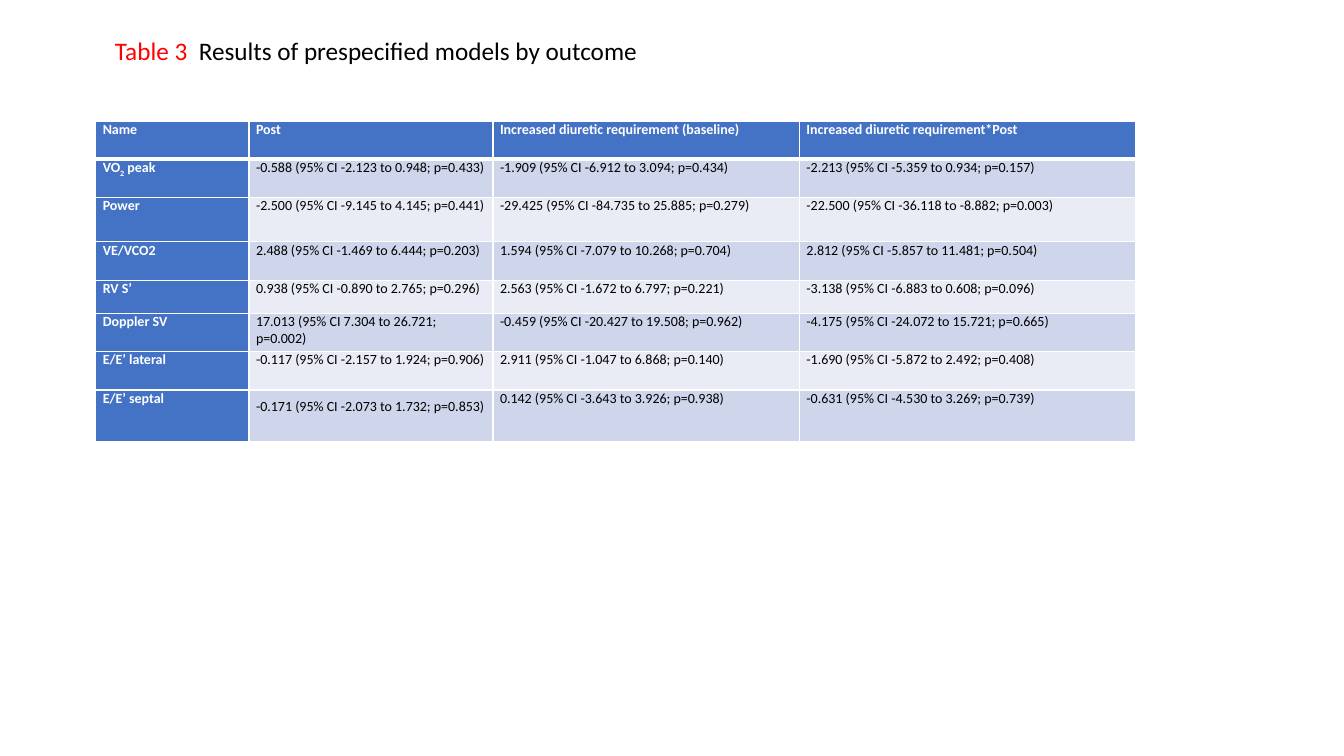
import pptx
import pptx.dml.color
import pptx.enum.text
import pptx.oxml
import pptx.oxml.ns
import pptx.util
from pptx.util import Inches

COLUMN_WIDTHS = [1.52, 2.42, 3.04, 3.33]
ROW_HEIGHTS = [0.38, 0.38, 0.44, 0.38, 0.33, 0.38, 0.38, 0.51]
HEADINGS = ["Name", "Post", "Increased diuretic requirement (baseline)",
            "Increased diuretic requirement*Post"]
OUTCOMES = [
    ("VO2 peak", "-0.588 -2.123 0.948 0.433", "-1.909 -6.912 3.094 0.434", "-2.213 -5.359 0.934 0.157"),
    ("Power", "-2.500 -9.145 4.145 0.441", "-29.425 -84.735 25.885 0.279", "-22.500 -36.118 -8.882 0.003"),
    ("VE/VCO2", "2.488 -1.469 6.444 0.203", "1.594 -7.079 10.268 0.704", "2.812 -5.857 11.481 0.504"),
    ("RV S’", "0.938 -0.890 2.765 0.296", "2.563 -1.672 6.797 0.221", "-3.138 -6.883 0.608 0.096"),
    ("Doppler SV", "17.013 7.304 26.721 0.002", "-0.459 -20.427 19.508 0.962", "-4.175 -24.072 15.721 0.665"),
    ("E/E’ lateral", "-0.117 -2.157 1.924 0.906", "2.911 -1.047 6.868 0.140", "-1.690 -5.872 2.492 0.408"),
    ("E/E’ septal", "-0.171 -2.073 1.732 0.853", "0.142 -3.643 3.926 0.938", "-0.631 -4.530 3.269 0.739"),
]


def color(value):
    return pptx.dml.color.RGBColor.from_string(value)


def describe(numbers):
    estimate, low, high, probability = numbers.split()
    return f"{estimate} (95% CI {low} to {high}; p={probability})"


class ResultsSlide:
    """Hold the style and the slide, and add each kind of element."""

    font_name = "Calibri"
    accent = "4472C4"
    bands = ["CFD5EA", "E9EBF5"]
    white = "FFFFFF"
    black = "000000"
    red = "FF0000"

    def __init__(self, presentation):
        self.slide = presentation.slides.add_slide(presentation.slide_layouts[5])

    def format_paragraph(self, paragraph, size, bold=False):
        paragraph.font.name = self.font_name
        paragraph.font.size = pptx.util.Pt(size)
        paragraph.font.bold = bold

    def add_title(self, label, text):
        title = self.slide.shapes.title
        title.left, title.top = Inches(1.04), Inches(0.3)
        title.width, title.height = Inches(7.8), Inches(0.71)
        frame = title.text_frame
        frame.auto_size = pptx.enum.text.MSO_AUTO_SIZE.NONE
        frame.vertical_anchor = pptx.enum.text.MSO_ANCHOR.TOP
        paragraph = frame.paragraphs[0]
        paragraph.alignment = pptx.enum.text.PP_ALIGN.LEFT
        self.format_paragraph(paragraph, 18)
        for words, shade in [(label, self.red), (text, self.black)]:
            run = paragraph.add_run()
            run.text = words
            run.font.color.rgb = color(shade)

    def add_borders(self, cell, top, bottom):
        properties = cell._tc.get_or_add_tcPr()
        widths = {"lnL": 1, "lnR": 1, "lnT": top, "lnB": bottom}
        for index, (side, width) in enumerate(widths.items()):
            properties.insert(index, pptx.oxml.parse_xml(
                f'<a:{side} {pptx.oxml.ns.nsdecls("a")} w="{pptx.util.Pt(width)}">'
                f'<a:solidFill><a:srgbClr val="{self.white}"/></a:solidFill></a:{side}>'))

    def fill_cell(self, cell, text, row, column):
        heading = row == 0 or column == 0
        cell.margin_left = cell.margin_right = Inches(0.07)
        cell.margin_top = cell.margin_bottom = 0
        cell.fill.solid()
        cell.fill.fore_color.rgb = color(self.accent if heading else self.bands[(row - 1) % 2])
        self.add_borders(cell, top=3 if row == 1 else 1, bottom=3 if row == 0 else 1)
        paragraph = cell.text_frame.paragraphs[0]
        self.format_paragraph(paragraph, 10, heading)
        paragraph.font.color.rgb = color(self.white if heading else self.black)
        parts = ["VO", "2", " peak"] if text == "VO2 peak" else [text]
        for part in parts:
            run = paragraph.add_run()
            run.text = part
            run.font.size = pptx.util.Pt(10)
            run.font.bold = heading
            run.font.name = self.font_name
            run.font.color.rgb = color(self.white if heading else self.black)
            if part == "2":
                run.font._element.set("baseline", "-25000")
        return paragraph

    def add_table(self, rows):
        table = self.slide.shapes.add_table(
            len(rows), len(COLUMN_WIDTHS), Inches(0.95), Inches(1.2),
            Inches(sum(COLUMN_WIDTHS)), Inches(sum(ROW_HEIGHTS))).table
        table.first_col = True
        for column, width in zip(table.columns, COLUMN_WIDTHS):
            column.width = Inches(width)
        for row, height in zip(table.rows, ROW_HEIGHTS):
            row.height = Inches(height)
        for row, texts in enumerate(rows):
            for column, text in enumerate(texts):
                self.fill_cell(table.cell(row, column), text, row, column)
        table.cell(len(rows) - 1, 1).text_frame.paragraphs[0].line_spacing = 1.5


def main():
    presentation = pptx.Presentation()
    presentation.slide_width = Inches(13.33)
    presentation.slide_height = Inches(7.5)
    results = ResultsSlide(presentation)
    results.add_title("Table 3  ", "Results of prespecified models by outcome")
    results.add_table([HEADINGS] + [
        [name] + [describe(numbers) for numbers in models] for name, *models in OUTCOMES])
    presentation.save("out.pptx")


if __name__ == "__main__":
    main()
